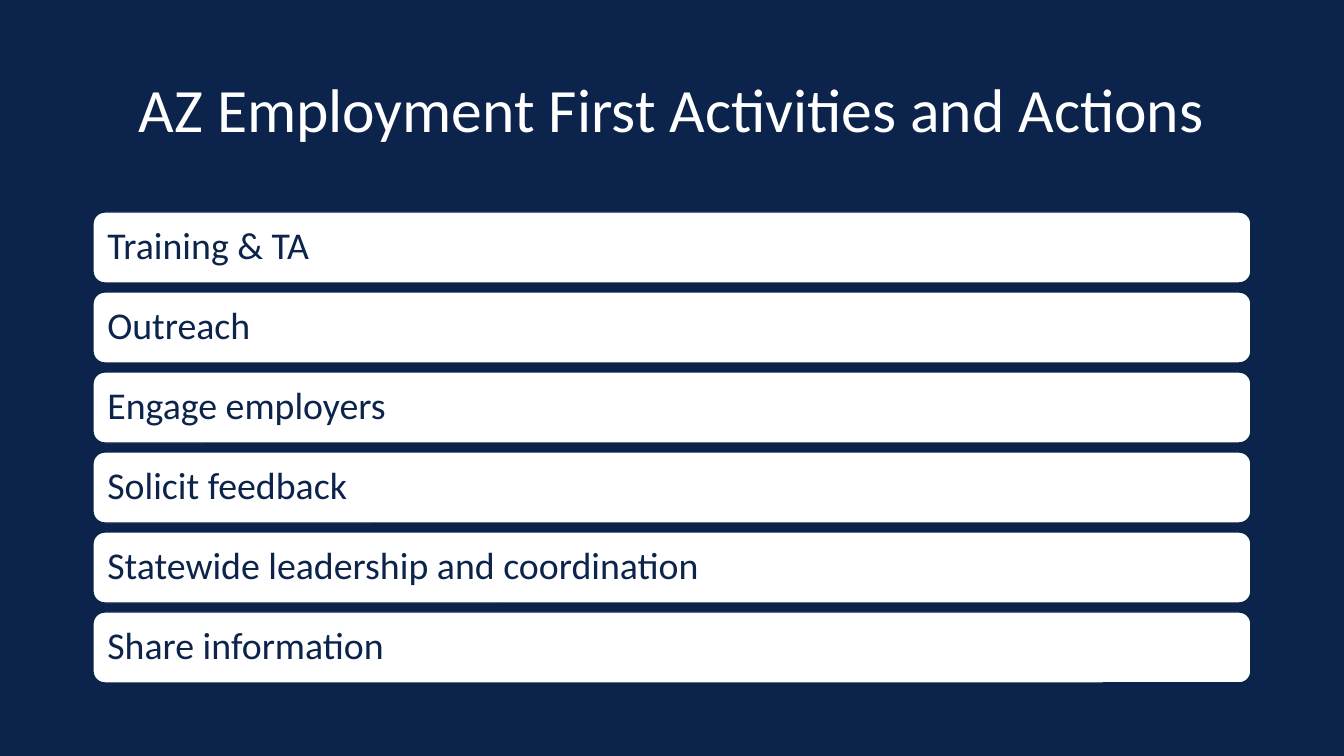
from collections import namedtuple
from dataclasses import dataclass

from pptx import Presentation
from pptx import util as u
from pptx.dml.color import RGBColor
from pptx.enum import shapes, text

PX = 914400 / 100.8
Box = namedtuple("Box", "left top width height")

TITLE = "AZ Employment First Activities and Actions"
ACTIVITIES = [
    "Training & TA",
    "Outreach",
    "Engage employers",
    "Solicit feedback",
    "Statewide leadership and coordination",
    "Share information",
]


@dataclass(frozen=True)
class Theme:
    """Colours, font and type sizes of the slide."""

    navy: RGBColor = RGBColor(0x0C, 0x23, 0x4B)
    white: RGBColor = RGBColor(0xFF, 0xFF, 0xFF)
    font: str = "Calibri"
    title_size: int = 44
    activity_size: int = 27


THEME = Theme()


def px(length):
    """Turn pixels into EMU."""
    return u.Emu(round(length * PX))


def write(frame, words, size, colour, align):
    """Fill a text frame with one vertically centred paragraph."""
    frame.word_wrap = True
    frame.vertical_anchor = text.MSO_ANCHOR.MIDDLE
    frame.text = words
    para = frame.paragraphs[0]
    para.alignment = align
    para.line_spacing = 0.9
    span = para.runs[0]
    span.font.name = THEME.font
    span.font.size = u.Pt(size)
    span.font.color.rgb = colour


def add_title(page, box, words):
    """Place the centred slide title."""
    title = page.shapes.add_textbox(*map(px, box))
    write(title.text_frame, words, THEME.title_size, THEME.white, text.PP_ALIGN.CENTER)


def add_activities(page, box, activities, gap):
    """Stack one rounded bar per activity, evenly spaced down the box."""
    pitch = (box.height + gap) / len(activities)
    for index, activity in enumerate(activities):
        place = Box(box.left, box.top + index * pitch, box.width, pitch - gap)
        bar = page.shapes.add_shape(
            shapes.MSO_SHAPE.ROUNDED_RECTANGLE, *map(px, place)
        )
        bar.shadow.inherit = False
        bar.fill.solid()
        bar.fill.fore_color.rgb = THEME.white
        bar.line.color.rgb = THEME.navy
        bar.line.width = u.Pt(1)
        frame = bar.text_frame
        frame.margin_left = frame.margin_right = px(11)
        write(frame, activity, THEME.activity_size, THEME.navy, text.PP_ALIGN.LEFT)


def main():
    """Build and save the deck."""
    deck = Presentation()
    deck.slide_width, deck.slide_height = px(1344), px(756)
    page = deck.slides.add_slide(deck.slide_layouts[6])
    page.background.fill.solid()
    page.background.fill.fore_color.rgb = THEME.navy
    add_title(page, Box(92, 40, 1160, 146), TITLE)
    add_activities(page, Box(93, 212, 1158, 471), ACTIVITIES, gap=9)
    deck.save("out.pptx")


if __name__ == "__main__":
    main()
